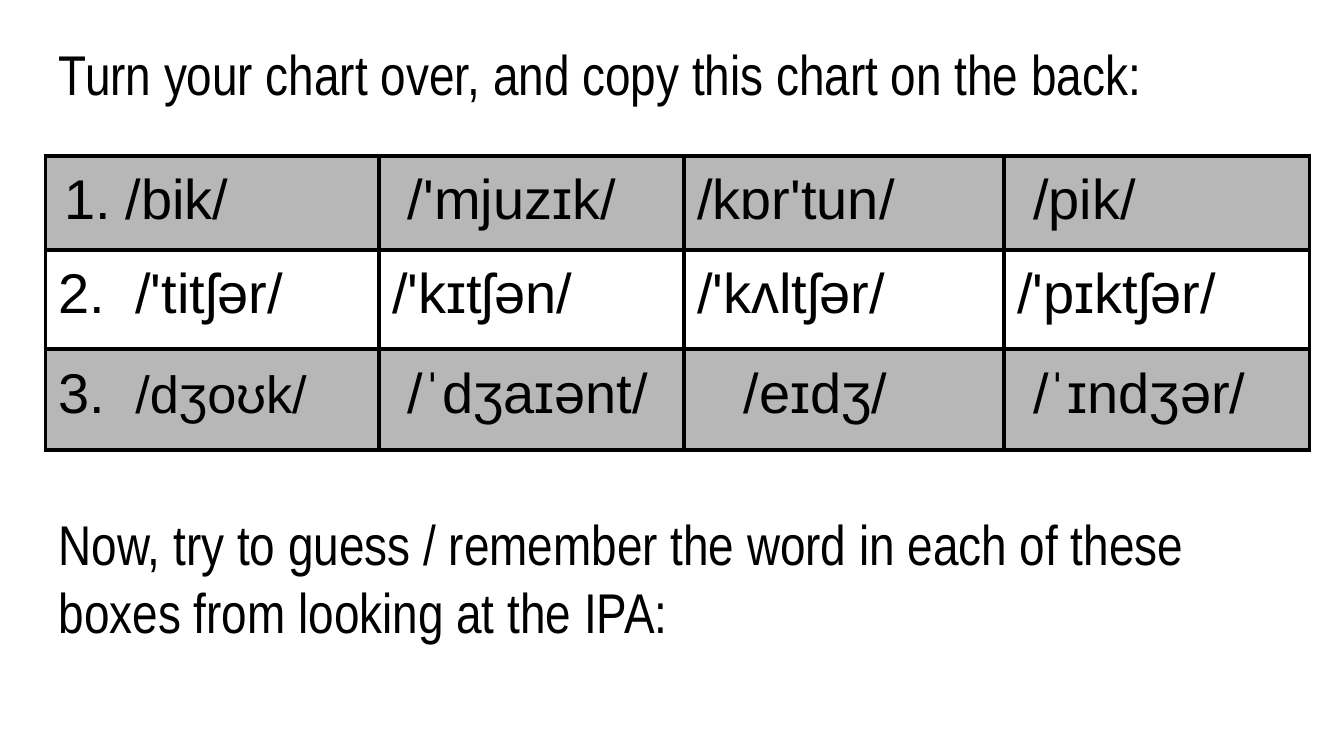
"""Build a slide with an IPA chart to copy and a word-guessing prompt."""
import pptx
import pptx.dml.color
import pptx.oxml
import pptx.oxml.ns
import pptx.util

Cm, Pt = pptx.util.Cm, pptx.util.Pt
BLACK = pptx.dml.color.RGBColor(0x00, 0x00, 0x00)
GRAY = pptx.dml.color.RGBColor(0xB7, 0xB7, 0xB7)

PROMPTS = [
    ("Turn your chart over, and copy this chart on the back:", 0),
    ("Now, try to guess / remember the word in each of these boxes from looking at the IPA:", 216),
]
ROWS = [
    ["/bik/", "/'mjuzɪk/", "/kɒr'tun/", "/pik/"],
    ["/'titʃər/", "/'kɪtʃən/", "/'kʌltʃər/", "/'pɪktʃər/"],
    ["/dʒoʊk/", "/ˈdʒaɪənt/", "/eɪdʒ/", "/ˈɪndʒər/"],
]
INDENTS = [
    [1.27, 0.3, 0, 0.3],
    [1.45, 0, 0, 0],
    [1.45, 0.3, 0.88, 0.3],
]
NUMBERS = ["", "2.\t", "3.\t"]
SMALL = {"/dʒoʊk/": 28}
COL_WIDTHS = [6.3, 5.77, 6.05, 5.77]
ROW_HEIGHTS = [1.73, 1.88, 1.9]
MARGIN = 0.25


def add_run(p, text, font, size=30):
    r = p.add_run()
    r.text = text
    r.font.name = font
    r.font.size = Pt(size)
    r.font.bold = False
    r.font.color.rgb = BLACK


def set_margins(box):
    box.margin_left = box.margin_right = Cm(MARGIN)
    box.margin_top = box.margin_bottom = Cm(MARGIN)


def set_indent(p, left, first):
    pPr = p._p.get_or_add_pPr()
    pPr.set("marL", str(Cm(left)))
    pPr.set("indent", str(Cm(first)))
    return pPr


def add_borders(cell):
    tcPr = cell._tc.get_or_add_tcPr()
    for i, side in enumerate(("lnL", "lnR", "lnT", "lnB")):
        tcPr.insert(i, pptx.oxml.parse_xml(
            f'<a:{side} {pptx.oxml.ns.nsdecls("a")} w="{Pt(2.25)}"><a:solidFill>'
            f'<a:srgbClr val="{BLACK}"/></a:solidFill></a:{side}>'))


def add_prompts(s):
    tf = s.shapes.add_textbox(Cm(0.86), Cm(0.5), Cm(23.67), Cm(1.6)).text_frame
    tf.word_wrap = True
    set_margins(tf)
    for i, (text, gap) in enumerate(PROMPTS):
        p = tf.add_paragraph() if i else tf.paragraphs[0]
        p.space_before = Pt(gap)
        add_run(p, text, "Arial Narrow")


def add_ipa_chart(s):
    table = s.shapes.add_table(
        len(ROWS), len(COL_WIDTHS), Cm(0.86), Cm(2.95),
        Cm(sum(COL_WIDTHS)), Cm(sum(ROW_HEIGHTS))).table
    table.first_row = table.horz_banding = False
    for column, width in zip(table.columns, COL_WIDTHS):
        column.width = Cm(width)
    for i, words in enumerate(ROWS):
        table.rows[i].height = Cm(ROW_HEIGHTS[i])
        for j, word in enumerate(words):
            cell = table.cell(i, j)
            set_margins(cell)
            if i % 2:
                cell.fill.background()
            else:
                cell.fill.solid()
                cell.fill.fore_color.rgb = GRAY
            add_borders(cell)
            p = cell.text_frame.paragraphs[0]
            indent = INDENTS[i][j]
            if j:
                set_indent(p, indent, 0)
            elif NUMBERS[i]:
                set_indent(p, indent, -indent)
                add_run(p, NUMBERS[i], "Arial")
            else:
                pPr = set_indent(p, indent, -1.17)
                bullet = pptx.oxml.parse_xml(
                    f'<a:buAutoNum {pptx.oxml.ns.nsdecls("a")} type="arabicPeriod"/>')
                pPr.append(bullet)
            add_run(p, word, "Arial", SMALL.get(word, 30))


def main():
    prs = pptx.Presentation()
    prs.slide_width, prs.slide_height = Cm(25.4), Cm(14.29)
    s = prs.slides.add_slide(prs.slide_layouts[6])
    add_prompts(s)
    add_ipa_chart(s)
    prs.save("out.pptx")


if __name__ == "__main__":
    main()
